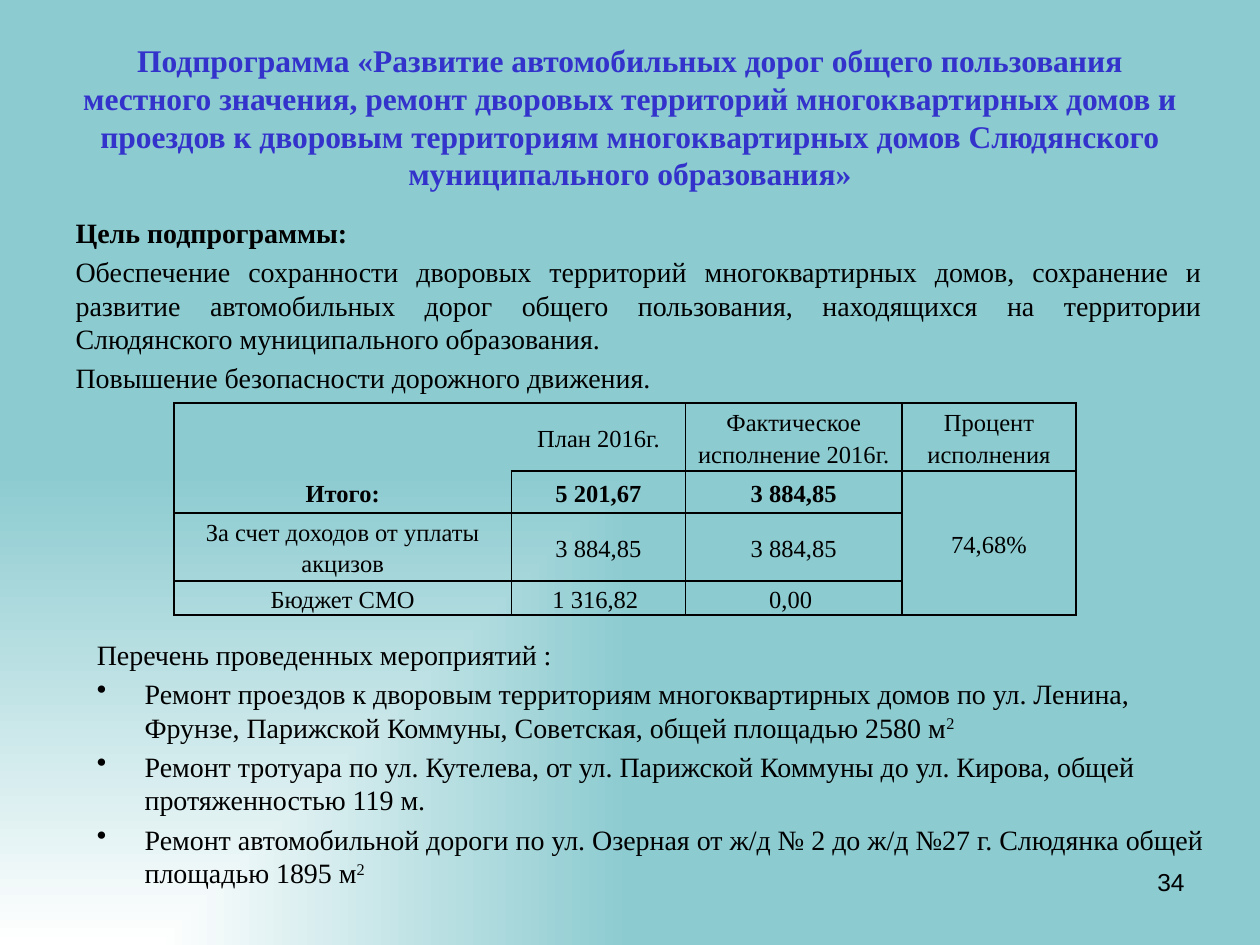
import pptx
import pptx.dml.color
import pptx.enum.text
import pptx.oxml
import pptx.oxml.ns
import pptx.util
from pptx.util import Inches

SERIF = "Times New Roman"
BLACK = "000000"
ALIGN = pptx.enum.text.PP_ALIGN
ANCHOR = pptx.enum.text.MSO_ANCHOR
NAMESPACE = pptx.oxml.ns.nsdecls("a")

TITLE = (
    "Подпрограмма «Развитие автомобильных дорог общего пользования местного значения, "
    "ремонт дворовых территорий многоквартирных домов и проездов к дворовым территориям "
    "многоквартирных домов Слюдянского муниципального образования»"
)
GOALS = [
    "Цель подпрограммы:",
    "Обеспечение сохранности дворовых территорий многоквартирных домов, сохранение и "
    "развитие автомобильных дорог общего пользования, находящихся на территории "
    "Слюдянского муниципального образования.",
    "Повышение безопасности дорожного движения.",
]
WORKS_HEADING = "Перечень проведенных мероприятий :"
WORKS = [
    ("Ремонт проездов к дворовым территориям многоквартирных домов по ул. Ленина, "
     "Фрунзе, Парижской Коммуны, Советская, общей площадью 2580 м", "2"),
    ("Ремонт тротуара по ул. Кутелева, от ул. Парижской Коммуны до ул. Кирова, "
     "общей протяженностью 119 м.", ""),
    ("Ремонт автомобильной дороги по ул. Озерная от ж/д № 2 до ж/д №27 г. Слюдянка "
     "общей площадью 1895 м", "2"),
]
BUDGET = [
    ["", "План 2016г.", "Фактическое исполнение 2016г.", "Процент исполнения"],
    ["Итого:", "5 201,67", "3 884,85", "74,68%"],
    ["За счет доходов от уплаты акцизов", "3 884,85", "3 884,85", ""],
    ["Бюджет СМО", "1 316,82 ", "0,00 ", ""],
]
COLUMN_WIDTHS = [2.68, 1.38, 1.72, 1.38]
ROW_HEIGHTS = [0.54, 0.33, 0.54, 0.27]
OPEN_EDGES = {(0, 0): "RB", (0, 1): "L", (1, 0): "T"}


def color(value):
    return pptx.dml.color.RGBColor.from_string(value)


def place(shape, left, top, width, height):
    shape.left, shape.top = Inches(left), Inches(top)
    shape.width, shape.height = Inches(width), Inches(height)


def format_runs(paragraph, size, font=SERIF, fill=BLACK, bold=False):
    for run in paragraph.runs:
        run.font.size = pptx.util.Pt(size)
        run.font.name = font
        run.font.bold = bold
        run.font.color.rgb = color(fill)


def set_bullet(paragraph, character="", indent=0):
    properties = paragraph._p.get_or_add_pPr()
    properties.set("marL", str(Inches(indent)))
    properties.set("indent", str(-Inches(indent)))
    markup = f'<a:buChar {NAMESPACE} char="{character}"/>' if character else f"<a:buNone {NAMESPACE}/>"
    properties.append(pptx.oxml.parse_xml(markup))


def set_background(slide):
    fill = slide.background.fill
    fill.gradient()
    for stop, position, value in zip(fill.gradient_stops, (0, 1), ("FFFFFF", "8CCBD0")):
        stop.position = position
        stop.color.rgb = color(value)
    gradient = slide.background._cSld.bg.bgPr.find(pptx.oxml.ns.qn("a:gradFill"))
    gradient.remove(gradient.find(pptx.oxml.ns.qn("a:lin")))
    gradient.find(pptx.oxml.ns.qn("a:gsLst")).addnext(pptx.oxml.parse_xml(
        f'<a:path {NAMESPACE} path="rect"><a:fillToRect t="100000" r="100000"/></a:path>'))


def fill_title(shape):
    place(shape, 0.5, 0.3, 9, 1.25)
    frame = shape.text_frame
    frame.text = TITLE
    frame.auto_size = pptx.enum.text.MSO_AUTO_SIZE.NONE
    frame.vertical_anchor = ANCHOR.MIDDLE
    frame.paragraphs[0].alignment = ALIGN.CENTER
    format_runs(frame.paragraphs[0], 18, fill="3333CC", bold=True)


def fill_goals(shape):
    place(shape, 0.5, 1.66, 9.14, 1.62)
    frame = shape.text_frame
    frame.text = "\n".join(GOALS)
    frame.auto_size = pptx.enum.text.MSO_AUTO_SIZE.NONE
    for index, paragraph in enumerate(frame.paragraphs):
        set_bullet(paragraph)
        paragraph.alignment = ALIGN.JUSTIFY
        paragraph.space_before = pptx.util.Pt(3.2 if index else 0)
        format_runs(paragraph, 16, bold=index == 0)


def add_text_box(slide, text, left, top, width, height):
    frame = slide.shapes.add_textbox(
        Inches(left), Inches(top), Inches(width), Inches(height)).text_frame
    frame.word_wrap = True
    frame.text = text
    return frame


def add_works(slide):
    lines = [WORKS_HEADING] + [text for text, _ in WORKS]
    frame = add_text_box(slide, "\n".join(lines), 0.67, 5.01, 9.06, 2.2)
    heading, *items = frame.paragraphs
    format_runs(heading, 16)
    for paragraph, (_, exponent) in zip(items, WORKS):
        set_bullet(paragraph, "•", 0.38)
        paragraph.space_before = pptx.util.Pt(3.2)
        if exponent:
            run = paragraph.add_run()
            run.text = exponent
            run.font._element.set("baseline", "30000")
        format_runs(paragraph, 16)


def add_slide_number(slide):
    paragraph = add_text_box(slide, "34", 7.17, 6.83, 2.33, 0.52).paragraphs[0]
    paragraph.alignment = ALIGN.RIGHT
    format_runs(paragraph, 14, font="Arial")


def set_borders(cell, open_edges):
    properties = cell._tc.get_or_add_tcPr()
    for edge in "LRTB":
        fill = "<a:noFill/>" if edge in open_edges else (
            f'<a:solidFill><a:srgbClr val="{BLACK}"/></a:solidFill>')
        properties.append(pptx.oxml.parse_xml(
            f'<a:ln{edge} {NAMESPACE} w="{pptx.util.Pt(1)}">{fill}</a:ln{edge}>'))


def fill_cell(cell, text, bold, open_edges):
    set_borders(cell, open_edges)
    cell.fill.background()
    cell.vertical_anchor = ANCHOR.MIDDLE
    cell.margin_left = cell.margin_right = Inches(0.07)
    cell.margin_top = cell.margin_bottom = 0
    if text:
        cell.text_frame.text = text
        paragraph = cell.text_frame.paragraphs[0]
        paragraph.alignment = ALIGN.CENTER
        paragraph.line_spacing = 1.15
        format_runs(paragraph, 14, bold=bold)


def add_budget_table(slide):
    table = slide.shapes.add_table(
        len(ROW_HEIGHTS), len(COLUMN_WIDTHS), Inches(1.38), Inches(3.2),
        Inches(sum(COLUMN_WIDTHS)), Inches(sum(ROW_HEIGHTS))).table
    table.first_row = table.horz_banding = False
    for column, width in zip(table.columns, COLUMN_WIDTHS):
        column.width = Inches(width)
    for row, height in zip(table.rows, ROW_HEIGHTS):
        row.height = Inches(height)
    for row_index, texts in enumerate(BUDGET):
        for column_index, text in enumerate(texts):
            fill_cell(table.cell(row_index, column_index), text,
                      row_index == 1 and column_index < 3,
                      OPEN_EDGES.get((row_index, column_index), ""))
    table.cell(1, 3).merge(table.cell(3, 3))


def main():
    presentation = pptx.Presentation()
    presentation.slide_width = Inches(10)
    presentation.slide_height = Inches(7.5)
    slide = presentation.slides.add_slide(presentation.slide_layouts[1])
    set_background(slide)
    fill_title(slide.shapes.title)
    fill_goals(slide.placeholders[1])
    add_budget_table(slide)
    add_works(slide)
    add_slide_number(slide)
    presentation.save("out.pptx")


if __name__ == "__main__":
    main()
